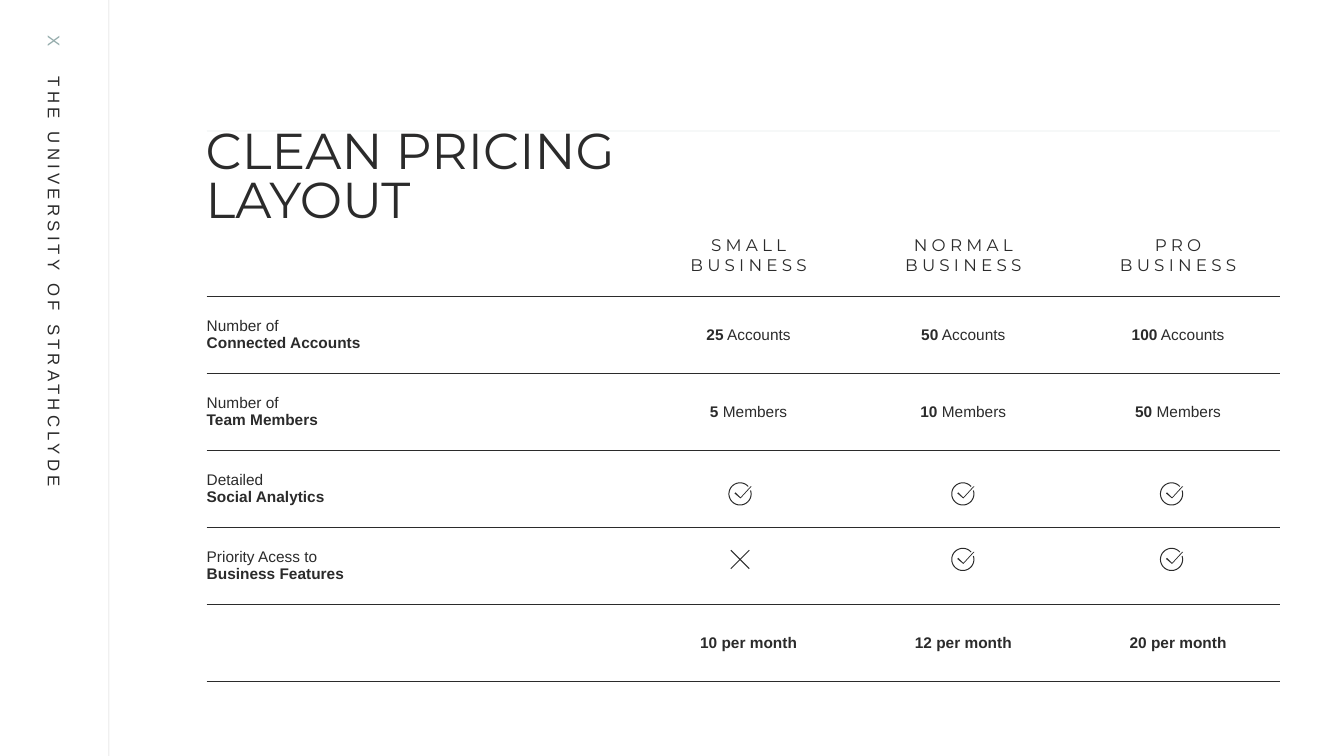
from math import cos, radians, sin, sqrt

from lxml import etree
from pptx import Presentation
from pptx.dml.color import RGBColor
from pptx.enum.shapes import MSO_CONNECTOR
from pptx.enum.text import MSO_ANCHOR, PP_ALIGN
from pptx.oxml.ns import qn
from pptx.util import Inches, Pt

LEFT, CENTER = PP_ALIGN.LEFT, PP_ALIGN.CENTER
TOP, MIDDLE, BOTTOM = MSO_ANCHOR.TOP, MSO_ANCHOR.MIDDLE, MSO_ANCHOR.BOTTOM
STRAIGHT = MSO_CONNECTOR.STRAIGHT

COLORS = {"ink": "2B2B2B", "sage": "95ACAC", "mist": "F6F8F8"}
SANS, DISPLAY = "Arial", "Montserrat"
STROKE = 0.01

PLANS = [("SMALL", "BUSINESS"), ("NORMAL", "BUSINESS"), ("PRO", "BUSINESS")]
FEATURES = [
    (("Number of", "Connected Accounts"), ("25", "50", "100"), " Accounts"),
    (("Number of", "Team Members"), ("5", "10", "50"), " Members"),
    (("Detailed", "Social Analytics"), (), ""),
    (("Priority Acess to", "Business Features"), (), ""),
    ((), ("10 per month", "12 per month", "20 per month"), ""),
]
INCLUDED = [(True, True, True), (False, True, True)]


def rgb(name):
    return RGBColor.from_string(COLORS[name])


def style(paragraph, font_name, size, spacing=0, align=LEFT):
    paragraph.alignment = align
    font = paragraph.font
    font.name, font.size = font_name, Pt(size)
    font.color.rgb = rgb("ink")
    if spacing:
        properties = paragraph._p.get_or_add_pPr().get_or_add_defRPr()
        properties.set("spc", str(spacing * 100))


def add_run(paragraph, text, bold=False):
    run = paragraph.add_run()
    run.text = text
    if bold:
        run.font.bold = True
    return run


def set_margins(target, left, top, right, bottom):
    target.margin_left, target.margin_top = Inches(left), Inches(top)
    target.margin_right, target.margin_bottom = Inches(right), Inches(bottom)


def paragraphs(text_frame, count):
    return [text_frame.paragraphs[0]] + [text_frame.add_paragraph() for _ in range(count - 1)]


def rule_cell(cell, top, bottom):
    """Draw the top and bottom rules, each a (color, points) pair, and nothing else."""
    properties = cell._tc.get_or_add_tcPr()
    for side, rule in (("L", None), ("R", None), ("T", top), ("B", bottom)):
        line = etree.SubElement(properties, qn(f"a:ln{side}"))
        if rule is None:
            etree.SubElement(line, qn("a:noFill"))
            continue
        color, width = rule
        line.set("w", str(Pt(width)))
        fill = etree.SubElement(line, qn("a:solidFill"))
        etree.SubElement(fill, qn("a:srgbClr"), val=COLORS[color])
    cell.fill.background()


def add_sidebar(slide, width, height):
    divider = slide.shapes.add_connector(STRAIGHT, Inches(width), 0, Inches(width), Inches(height))
    divider.line.color.rgb = rgb("ink")
    divider.line.width = Pt(0.5)
    color = divider.line._ln.find(f".//{qn('a:srgbClr')}")
    etree.SubElement(color, qn("a:alpha"), val="20000")
    etree.SubElement(divider._element.spPr, qn("a:effectLst"))

    length, thickness = 5.67, 0.3
    university = slide.shapes.add_textbox(
        Inches(width / 2 - length / 2), Inches(3.09 - thickness / 2),
        Inches(length), Inches(thickness))
    university.rotation = 90
    university.text_frame.word_wrap = True
    paragraph = university.text_frame.paragraphs[0]
    tabs = etree.SubElement(paragraph._p.get_or_add_pPr(), qn("a:tabLst"))
    etree.SubElement(tabs, qn("a:tab"), pos=str(Inches(0.41)), algn="l")
    style(paragraph, SANS, 12, spacing=3)
    add_run(paragraph, "X").font.color.rgb = rgb("sage")
    add_run(paragraph, "\tTHE UNIVERSITY OF STRATHCLYDE")


def add_title(slide, left, top, width, height):
    title = slide.shapes.add_textbox(Inches(left), Inches(top), Inches(width), Inches(height))
    frame = title.text_frame
    frame.word_wrap = True
    frame.vertical_anchor = TOP
    set_margins(frame, 0, 0.21, 0, 0)
    paragraph = frame.paragraphs[0]
    paragraph.line_spacing = 0.8
    style(paragraph, DISPLAY, 36)
    add_run(paragraph, "CLEAN PRICING LAYOUT")


def fill_plan(cell, lines):
    cell.vertical_anchor = BOTTOM
    set_margins(cell, 0.1, 0, 0, 0.2)
    for paragraph, line in zip(paragraphs(cell.text_frame, len(lines)), lines):
        style(paragraph, DISPLAY, 12, spacing=3, align=CENTER)
        add_run(paragraph, line)


def fill_feature(cell, lines):
    cell.vertical_anchor = MIDDLE
    set_margins(cell, 0, 0.05, 0.1, 0.05)
    for row, (paragraph, line) in enumerate(zip(paragraphs(cell.text_frame, len(lines)), lines)):
        style(paragraph, SANS, 11)
        add_run(paragraph, line, bold=row == 1)


def fill_amount(cell, amount, unit):
    cell.vertical_anchor = MIDDLE
    set_margins(cell, 0.1, 0.05, 0, 0.05)
    paragraph = cell.text_frame.paragraphs[0]
    style(paragraph, SANS, 11, align=CENTER)
    add_run(paragraph, amount, bold=True)
    if unit:
        add_run(paragraph, unit)


def add_pricing_table(slide, left, top, width, height):
    header_height, plan_width = 1.64, 2.13
    table = slide.shapes.add_table(
        len(FEATURES) + 1, len(PLANS) + 1,
        Inches(left), Inches(top), Inches(width), Inches(height)).table
    table.first_row = table.horz_banding = False
    for index, column in enumerate(table.columns):
        column.width = Inches(plan_width if index else width - len(PLANS) * plan_width)
    for index, row in enumerate(table.rows):
        row.height = Inches((height - header_height) / len(FEATURES) if index else header_height)
        for cell in row.cells:
            rule_cell(cell, ("ink", 0.5) if index else ("mist", 1),
                      ("ink", 1 if index == len(FEATURES) else 0.5))

    for column, plan in enumerate(PLANS, 1):
        fill_plan(table.cell(0, column), plan)
    for row, (feature, amounts, unit) in enumerate(FEATURES, 1):
        if feature:
            fill_feature(table.cell(row, 0), feature)
        for column, amount in enumerate(amounts, 1):
            fill_amount(table.cell(row, column), amount, unit)

    for y, marks in zip((3.6, 4.25), INCLUDED):
        for x, included in zip((5.29, 7.5, 9.57), marks):
            add_icon(slide, left + x, top + y, check_outlines() if included else cross_outlines())


def check_outlines():
    """Open ring and tick, in inches around the icon's centre."""
    radius = 0.115
    angles = [radians(degree) for degree in range(-18, 319, 8)]
    outer = [(radius * cos(a), radius * sin(a)) for a in angles]
    inner = [((radius - STROKE) * cos(a), (radius - STROKE) * sin(a)) for a in reversed(angles)]
    tick = [(0.06, 0.11), (0.12, 0.16), (0.23, 0.04), (0.22, 0.04), (0.12, 0.15), (0.07, 0.1)]
    return [outer + inner, [(x - radius, y - radius) for x, y in tick]]


def cross_outlines():
    """Two crossing strokes, in inches around the icon's centre."""
    reach, half = 0.095, STROKE / sqrt(2)
    arm = [(-reach, half - reach), (half - reach, -reach), (0, -half)]
    outline = []
    for _ in range(4):
        outline += arm
        arm = [(-y, x) for x, y in arm]
    return [outline]


def add_icon(slide, center_x, center_y, outlines):
    contours = [[(Inches(x), Inches(y)) for x, y in outline] for outline in outlines]
    builder = slide.shapes.build_freeform(*contours[0][0])
    for index, (start, *rest) in enumerate(contours):
        if index:
            builder.move_to(*start)
        builder.add_line_segments(rest, close=True)
    icon = builder.convert_to_shape(Inches(center_x), Inches(center_y))
    icon.fill.solid()
    icon.fill.fore_color.rgb = rgb("ink")
    icon.line.fill.background()
    icon.shadow.inherit = False


def main():
    presentation = Presentation()
    presentation.slide_width, presentation.slide_height = Inches(13.33), Inches(7.5)
    slide = presentation.slides.add_slide(presentation.slide_layouts[6])
    add_sidebar(slide, 1.08, 7.5)
    add_pricing_table(slide, 2.05, 1.3, 10.65, 5.46)
    add_title(slide, 2.04, 1.09, 4.62, 1.77)
    presentation.save("out.pptx")


if __name__ == "__main__":
    main()
